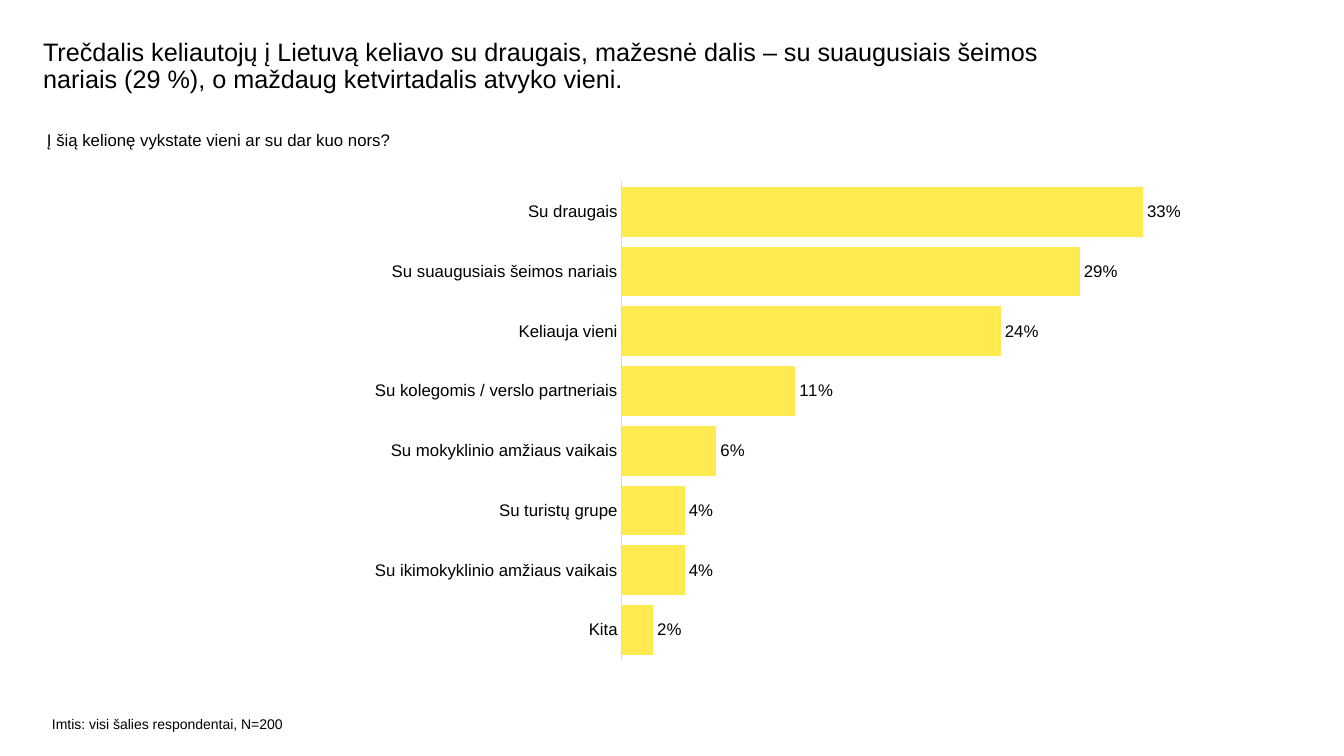
import pptx
import pptx.chart.data
import pptx.dml.color
import pptx.enum.chart
import pptx.oxml
import pptx.oxml.ns
import pptx.util

BLACK = pptx.dml.color.RGBColor(0x00, 0x00, 0x00)
YELLOW = pptx.dml.color.RGBColor(0xFF, 0xEB, 0x50)
AXIS_GREY = pptx.dml.color.RGBColor(0xD9, 0xD9, 0xD9)

COMPANIONS = [
    ("Su draugais", 0.33),
    ("Su suaugusiais šeimos nariais", 0.29),
    ("Keliauja vieni", 0.24),
    ("Su kolegomis / verslo partneriais", 0.11),
    ("Su mokyklinio amžiaus vaikais", 0.06),
    ("Su turistų grupe", 0.04),
    ("Su ikimokyklinio amžiaus vaikais", 0.04),
    ("Kita", 0.02),
]


class SlideBuilder:
    FONT = "Arial"
    EMU_PER_PX = 914400 / 100.8

    def __init__(self, presentation):
        presentation.slide_width = self.px(1344)
        presentation.slide_height = self.px(756)
        self.slide = presentation.slides.add_slide(presentation.slide_layouts[6])

    def px(self, length):
        return pptx.util.Emu(round(length * self.EMU_PER_PX))

    def style(self, font, size):
        font.name = self.FONT
        font.size = pptx.util.Pt(size)
        font.color.rgb = BLACK

    def text(self, wording, box, size, line_spacing=None):
        frame = self.slide.shapes.add_textbox(*map(self.px, box)).text_frame
        frame.word_wrap = True
        frame.margin_left = frame.margin_right = 0
        frame.margin_top = frame.margin_bottom = 0
        paragraph = frame.paragraphs[0]
        paragraph.text = wording
        paragraph.line_spacing = line_spacing
        self.style(paragraph.font, size)

    def bar_chart(self, shares, box, plot_box, axis_maximum):
        """Draw shares from top to bottom, with the bars' area at plot_box."""
        data = pptx.chart.data.CategoryChartData(number_format="0%")
        bottom_up = shares[::-1]
        data.categories = [label for label, share in bottom_up]
        data.add_series("Series 1", [share for label, share in bottom_up])
        chart = self.slide.shapes.add_chart(
            pptx.enum.chart.XL_CHART_TYPE.BAR_CLUSTERED, *map(self.px, box), data
        ).chart
        chart.has_title = False
        chart.has_legend = False
        self.style(chart.font, 12)

        plot = chart.plots[0]
        plot.gap_width = 20
        plot.vary_by_categories = False
        series = plot.series[0]
        series.format.fill.solid()
        series.format.fill.fore_color.rgb = YELLOW
        labels = series.data_labels
        labels.show_value = True
        labels.number_format = "0%"
        labels.number_format_is_linked = False
        labels.position = pptx.enum.chart.XL_LABEL_POSITION.OUTSIDE_END
        self.style(labels.font, 12)

        categories = chart.category_axis
        categories.major_tick_mark = pptx.enum.chart.XL_TICK_MARK.NONE
        categories.format.line.color.rgb = AXIS_GREY
        categories.format.line.width = pptx.util.Pt(0.75)
        self.style(categories.tick_labels.font, 12)
        values = chart.value_axis
        values.visible = False
        values.has_major_gridlines = False
        values.minimum_scale = 0
        values.maximum_scale = axis_maximum
        self.place_plot(chart, box, plot_box)

    def place_plot(self, chart, box, plot_box):
        left, top, width, height = box
        plot_left, plot_top, plot_width, plot_height = plot_box
        fractions = {
            "x": (plot_left - left) / width,
            "y": (plot_top - top) / height,
            "w": plot_width / width,
            "h": plot_height / height,
        }
        sizes = "".join(f'<c:{k} val="{v:.3f}"/>' for k, v in fractions.items())
        layout = pptx.oxml.parse_xml(
            f'<c:layout {pptx.oxml.ns.nsdecls("c")}><c:manualLayout>'
            '<c:layoutTarget val="inner"/><c:xMode val="edge"/><c:yMode val="edge"/>'
            f"{sizes}</c:manualLayout></c:layout>"
        )
        plot_area = chart.element.chart.plotArea
        for old_layout in plot_area.findall(pptx.oxml.ns.qn("c:layout")):
            plot_area.remove(old_layout)
        plot_area.insert(0, layout)


def main():
    presentation = pptx.Presentation()
    builder = SlideBuilder(presentation)
    builder.text(
        "Trečdalis keliautojų į Lietuvą keliavo su draugais, mažesnė dalis – su "
        "suaugusiais šeimos nariais (29 %), o maždaug ketvirtadalis atvyko vieni.",
        (43, 40, 1049, 60), 18, line_spacing=0.9,
    )
    builder.text(
        "Į šią kelionę vykstate vieni ar su dar kuo nors?", (47, 130, 1199, 61), 12
    )
    builder.text("Imtis: visi šalies respondentai, N=200", (52, 715, 255, 24), 10)
    builder.bar_chart(
        COMPANIONS, (359, 172, 842, 498), (622, 182, 553, 478), axis_maximum=0.35
    )
    presentation.save("out.pptx")


if __name__ == "__main__":
    main()
